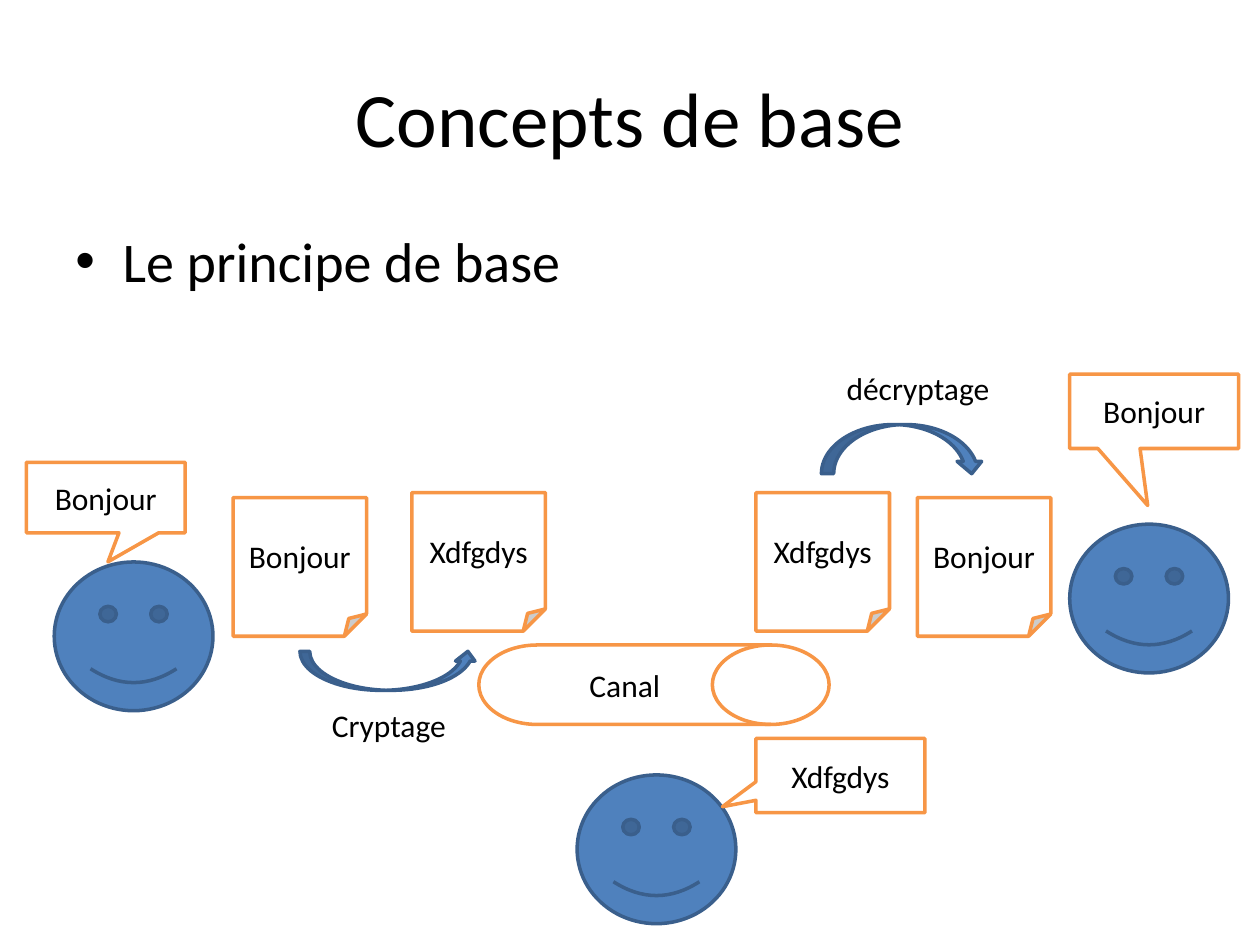
from pptx import Presentation
from pptx.dml.color import RGBColor
from pptx.enum.shapes import MSO_SHAPE as KIND
from pptx.enum.text import MSO_ANCHOR, PP_ALIGN
from pptx.util import Pt
from lxml.etree import SubElement
from pptx.oxml.ns import qn

HEX = {"blue": "4F81BD", "navy": "3A5F8C", "orange": "F79646",
       "white": "FFFFFF", "black": "000000"}
SOLID = ("blue", "navy")
PAPER = ("white", "orange")

FACE = (90.7, 85)
NOTE = (76.3, 79.2)
TALK = (96.5, 42.5)
LABEL = (101.5, 45.4)

# left, top
FACES = [(31, 321.1), (611.3, 299.5), (329.8, 442.8)]
# words, left, top, size, tip of the callout
TALKS = [
    ("Bonjour", 15.1, 264.2, (90.7, 40.3), (0.014, 0.912)),
    ("Bonjour", 611.3, 213.8, TALK, (-0.038, 1.267)),
    ("Xdfgdys", 432, 421.9, TALK, (-0.699, 0.42)),
]
# words, left, top
NOTES = [
    ("Bonjour", 133.2, 284.4),
    ("Xdfgdys", 235.4, 281.5),
    ("Xdfgdys", 432, 281.5),
    ("Bonjour", 524.2, 284.4),
]
LABELS = [("Cryptage", 171.4, 391.7), ("décryptage", 473.8, 198.7)]
# kind, left, top, size
ARROWS = [
    (KIND.CURVED_UP_ARROW, 171.4, 372.2, (101.5, 22.3)),
    (KIND.CURVED_DOWN_ARROW, 469.4, 242.6, (92.9, 28.1)),
]
CANAL = ("Canal", 273.6, 368.6, (200.2, 45.4))

deck = Presentation()
deck.slide_width, deck.slide_height = Pt(720), Pt(540)
slide = deck.slides.add_slide(deck.slide_layouts[6])


def color(name):
    return RGBColor.from_string(HEX[name])


def write(shape, words, size=18, align=PP_ALIGN.CENTER,
          anchor=MSO_ANCHOR.MIDDLE):
    frame = shape.text_frame
    frame.word_wrap = True
    frame.vertical_anchor = anchor
    para = frame.paragraphs[0]
    para.alignment = align
    run = para.add_run()
    run.text = words
    for key, value in {"name": "Calibri", "size": Pt(size)}.items():
        setattr(run.font, key, value)
    run.font.color.rgb = color("black")
    return para


def draw(kind, left, top, size, look, words=None):
    shape = slide.shapes.add_shape(kind, *map(Pt, (left, top, *size)))
    shape.shadow.inherit = False
    fill, line = look
    shape.fill.solid()
    shape.fill.fore_color.rgb = color(fill)
    shape.line.color.rgb = color(line)
    shape.line.width = Pt(2)
    if words:
        write(shape, words)
    return shape


def box(left, top, size):
    return slide.shapes.add_textbox(*map(Pt, (left, top, *size)))


def bullet(para, indent):
    props = para._p.get_or_add_pPr()
    props.set("marL", str(Pt(indent)))
    props.set("indent", str(-Pt(indent)))
    SubElement(props, qn("a:buFont"), typeface="Arial")
    SubElement(props, qn("a:buChar"), char="•")


write(box(36, 21.6, (648, 90)), "Concepts de base", 44)
bullet(write(box(36, 126, (648, 356.4)), "Le principe de base", 32,
             PP_ALIGN.LEFT, MSO_ANCHOR.TOP), 27)
# space before the first line
slide.shapes[-1].text_frame.paragraphs[0].space_before = Pt(6.4)

for left, top in FACES:
    draw(KIND.SMILEY_FACE, left, top, FACE, SOLID)
for words, left, top in NOTES:
    draw(KIND.FOLDED_CORNER, left, top, NOTE, PAPER, words)
for kind, left, top, size in ARROWS:
    draw(kind, left, top, size, SOLID)

words, *place = CANAL
draw(KIND.FLOWCHART_DIRECT_ACCESS_STORAGE, *place, PAPER, words)

for words, left, top in LABELS:
    write(box(left, top, LABEL), words)
for words, left, top, size, tip in TALKS:
    talk = draw(KIND.RECTANGULAR_CALLOUT, left, top, size, PAPER, words)
    for i, value in enumerate(tip):
        talk.adjustments[i] = value

deck.save("out.pptx")
